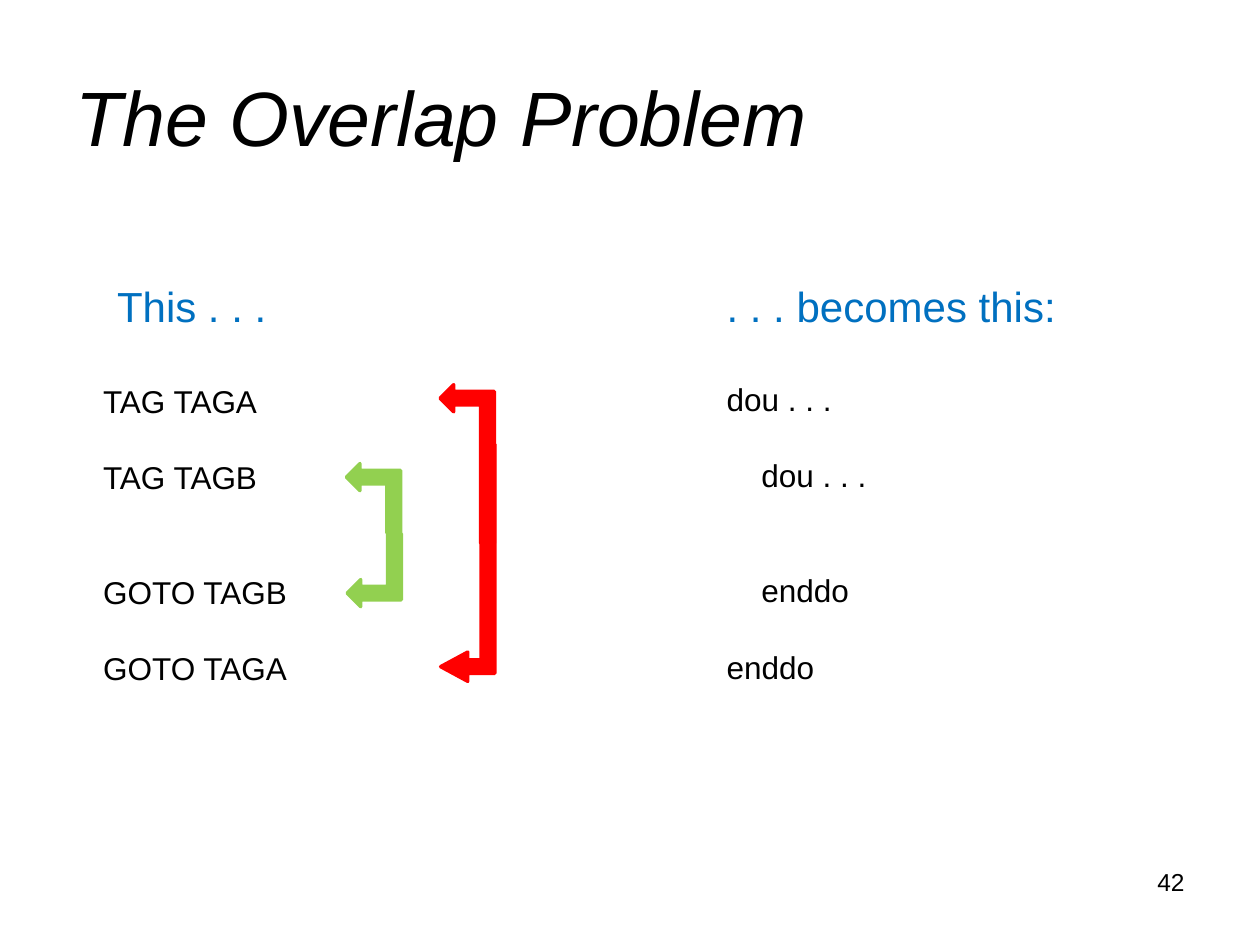
"""Build the slide on the overlap problem."""
from dataclasses import dataclass
from pptx import Presentation
from pptx.dml.color import RGBColor as Rgb
from pptx.enum.shapes import MSO_SHAPE as Shape
from pptx.enum.text import MSO_ANCHOR as Anchor, PP_ALIGN as Align
from pptx.util import Cm, Pt


@dataclass(frozen=True)
class Theme:
    font: str = "Arial"
    ink: str = "000000"
    blue: str = "0070C0"
    red: str = "FF0000"
    green: str = "92D050"
    title: int = 44
    head: int = 24
    code: int = 18
    page: int = 14
    gap: int = 22
    edge: int = 2


THEME = Theme()
TAGS = ["TAG TAGA", "TAG TAGB", "GOTO TAGB", "GOTO TAGA"]
LOOPS = ["dou . . .", "dou . . .", "enddo", "enddo"]
GAPS = [0, 1, 2, 1]
STEPS = [0, 1, 1, 0]


def add_text(slide, box, lines, size, color=THEME.ink, italic=False):
    frame = slide.shapes.add_textbox(*map(Cm, box)).text_frame
    frame.word_wrap = True
    frame.text = "\n".join(lines)
    for para in frame.paragraphs:
        for run in para.runs:
            font = run.font
            font.name = THEME.font
            font.size = Pt(size)
            font.italic = italic
            font.color.rgb = Rgb.from_string(color)
    return frame


def add_code(slide, box, lines, steps):
    frame = add_text(slide, box, lines, THEME.code)
    for para, gap, step in zip(frame.paragraphs, GAPS, steps):
        para.space_before = Pt(gap * THEME.gap)
        if step:
            para._p.get_or_add_pPr().set("marL", str(Cm(0.7 * step)))


def add_arrow(slide, box, color, low=False, head=0.25):
    arrow = slide.shapes.add_shape(Shape.BENT_UP_ARROW, *map(Cm, box))
    arrow.shadow.inherit = False
    arrow.rotation = 90 if low else 270
    if low:
        arrow._element.spPr.xfrm.set("flipV", "1")
    arrow.adjustments[1] = head
    if head != 0.25:
        arrow.adjustments[2] = 0.5
    arrow.fill.solid()
    arrow.fill.fore_color.rgb = Rgb.from_string(color)
    arrow.line.color.rgb = Rgb.from_string(color)
    arrow.line.width = Pt(THEME.edge)


def main():
    deck = Presentation()
    deck.slide_width, deck.slide_height = Cm(25.4), Cm(19.05)
    slide = deck.slides.add_slide(deck.slide_layouts[6])

    title = add_text(slide, (1.27, 0.76, 22.86, 3.15),
                     ["The Overlap Problem"], THEME.title, italic=True)
    title.vertical_anchor = Anchor.MIDDLE

    add_code(slide, (1.83, 7.57, 9.25, 6.4), TAGS, [0] * len(TAGS))
    add_code(slide, (14.4, 7.54, 5.84, 6.4), LOOPS, STEPS)

    add_arrow(slide, (7.82, 8.81, 3.2, 1.09), THEME.red)
    add_arrow(slide, (6.83, 9.5, 1.4, 1.09), THEME.green)
    add_arrow(slide, (7.04, 10.8, 4.78, 1.09), THEME.red, True, 0.27)
    add_arrow(slide, (6.81, 10.95, 1.47, 1.09), THEME.green, True)

    for left, text in ((2.11, "This . . ."), (14.4, ". . . becomes this:")):
        add_text(slide, (left, 5.54, 7.87, 1.27), [text], THEME.head, THEME.blue)

    page = add_text(slide, (17.35, 17.35, 6.78, 1.32), ["42"], THEME.page)
    page.paragraphs[0].alignment = Align.RIGHT

    deck.save("out.pptx")


if __name__ == "__main__":
    main()
